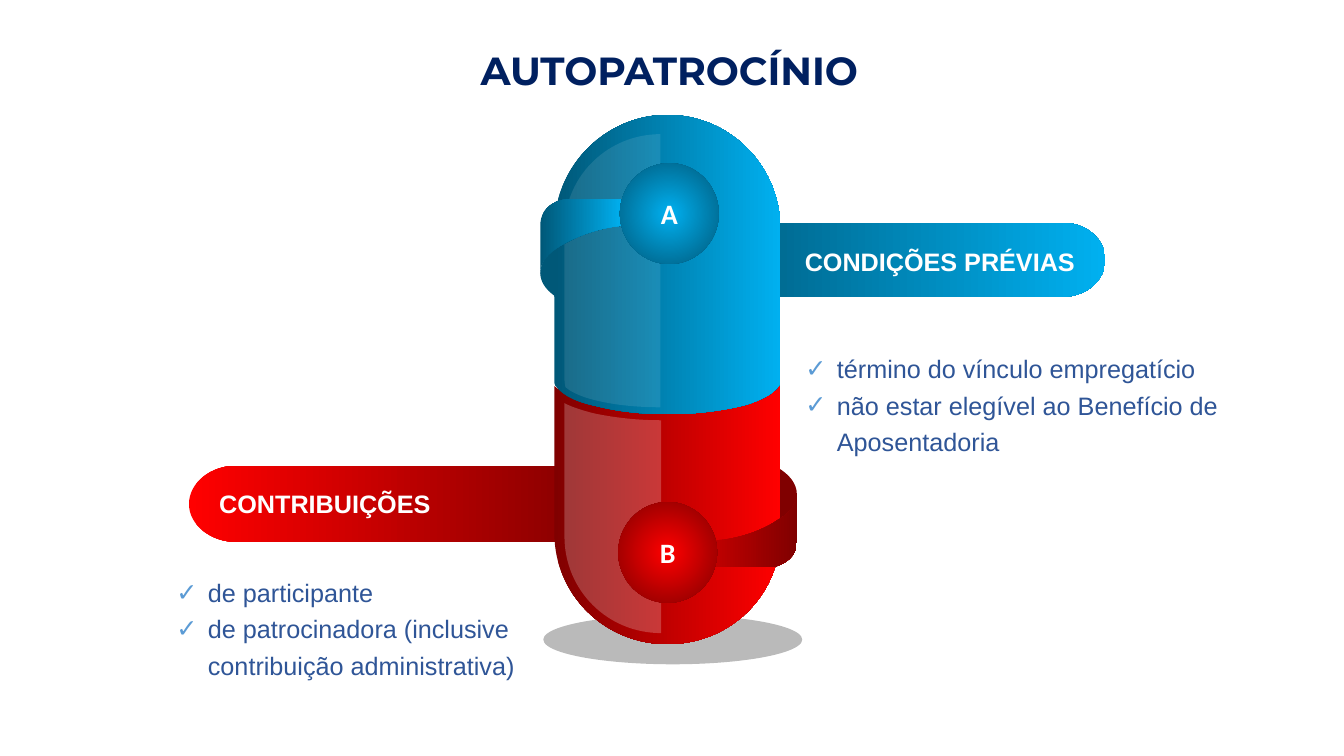
from lxml import etree
from pptx import Presentation
from pptx.dml.color import RGBColor
from pptx.enum import shapes, text
from pptx.oxml import ns
from pptx.util import Pt

COLORS = {
    "white": "FFFFFF", "black": "000000", "navy": "002060", "ink": "2F5597",
    "check": "5B9BD5", "red": "FF0000", "crimson": "BF0000", "maroon": "800000",
    "sky": "00B0F0", "teal": "005878",
}


def write(frame, *lines, size=18, font="Arial", color="white", bold=False,
          align=text.PP_ALIGN.LEFT, anchor=text.MSO_ANCHOR.MIDDLE,
          insets=(7.2, 3.6, 7.2, 3.6), wrap=True, spacing=1.0, bullet=None):
    frame.auto_size = text.MSO_AUTO_SIZE.NONE
    frame.word_wrap = wrap
    frame.vertical_anchor = anchor
    (frame.margin_left, frame.margin_top,
     frame.margin_right, frame.margin_bottom) = map(Pt, insets)
    for number, line in enumerate(lines):
        paragraph = frame.add_paragraph() if number else frame.paragraphs[0]
        if bullet:
            properties = paragraph._p.get_or_add_pPr()
            properties.set("marL", str(Pt(22.5)))
            properties.set("indent", str(-Pt(22.5)))
            tint = etree.SubElement(properties, ns.qn("a:buClr"))
            etree.SubElement(tint, ns.qn("a:srgbClr"), val=COLORS["check"])
            etree.SubElement(properties, ns.qn("a:buChar"), char=bullet)
        paragraph.alignment = align
        paragraph.line_spacing = spacing
        paragraph.space_before = Pt(0)
        run = paragraph.add_run()
        run.text = line
        run.font.size = Pt(size)
        run.font.name = font
        run.font.bold = bold
        run.font.color.rgb = RGBColor.from_string(COLORS[color])


def add_outline(outline):
    """Draw a start point followed by line ends (x, y) and cubic curves (six numbers)."""
    points = [(Pt(segment[i]), Pt(segment[i + 1]))
              for segment in outline for i in range(0, len(segment), 2)]
    builder = slide.shapes.build_freeform(*points[0])
    builder.add_line_segments(points[1:], close=True)
    drawn = builder.convert_to_shape()
    contour = drawn._element.find(".//" + ns.qn("a:path"))
    steps = iter(contour.findall(ns.qn("a:lnTo")))
    for segment in outline[1:]:
        step = next(steps)
        if len(segment) == 6:
            step.tag = ns.qn("a:cubicBezTo")
            for _ in range(2):
                control = next(steps)
                step.append(control[0])
                contour.remove(control)
    return drawn


deck = Presentation()
deck.slide_width, deck.slide_height = Pt(960), Pt(540)
slide = deck.slides.add_slide(deck.slide_layouts[3])

# Title and the two lists
heading, contributions, conditions = slide.placeholders
for holder, box in ((heading, (329.8, 29.5, 296.6, 41)),
                    (contributions, (118.8, 404.6, 289.4, 83.5)),
                    (conditions, (568.1, 244.8, 345.6, 83.5))):
    holder.left, holder.top, holder.width, holder.height = map(Pt, box)

write(heading.text_frame, "AUTOPATROCÍNIO", size=28, font="Montserrat", color="navy",
      bold=True, align=text.PP_ALIGN.CENTER, anchor=text.MSO_ANCHOR.TOP, wrap=False)
checklist = dict(color="ink", anchor=text.MSO_ANCHOR.TOP, spacing=1.2, bullet="✓")
write(contributions.text_frame, "de participante",
      "de patrocinadora (inclusive contribuição administrativa)", **checklist)
write(conditions.text_frame, "término do vínculo empregatício",
      "não estar elegível ao Benefício de Aposentadoria", **checklist)

# Capsule outlines: a tuple is an ellipse box, a list is a path
floor_shadow = (388.1, 439.2, 185, 35.3)
rim_b = (409.7, 298.8, 136.1, 34.6)
badge_b = (441.6, 358.6, 70.6, 72)
badge_a = (442.8, 116.6, 70.6, 72)
banner_b = [(169.2, 332.6), (150.5, 332.6, 135, 344.9, 135, 360),
            (135, 375.1, 150.5, 387.2, 169.2, 387.2), (554.4, 387.2), (554.4, 332.6)]
core_b = [(478.1, 334.1), (440.6, 334.1, 409.7, 325.4, 409.7, 314.6), (409.7, 380.2),
          (409.7, 418.3, 440.6, 449.3, 478.1, 449.3),
          (515.5, 449.3, 545.8, 418.3, 545.8, 380.2), (545.8, 314.6),
          (545.8, 325.4, 515.5, 334.1, 478.1, 334.1)]
fold_b = [(554.4, 333.4), (554.4, 372.2), (563.8, 367.2, 569.2, 360, 569.2, 352.8),
          (569.2, 345.6, 563.8, 338.4, 554.4, 333.4)]
half_b = [(553, 279.4), (548.6, 282.2, 542.2, 284.4, 535, 286.6),
          (519.8, 290.9, 499.7, 293, 476.8, 293), (457.2, 293, 439.2, 290.9, 424.8, 288),
          (411.8, 285.1, 401.8, 280.8, 396, 275.8), (396, 380.9),
          (396, 424.8, 432, 460.1, 476.8, 460.1),
          (522, 460.1, 557.4, 424.8, 557.4, 380.9), (557.4, 275.8),
          (556.6, 277.2, 555.1, 277.9, 553, 279.4)]
gloss_b = [(424.1, 295.2), (415.4, 293, 409, 290.9, 403.2, 288), (403.2, 383),
           (403.2, 421.9, 434.2, 452.2, 472.3, 452.2), (472.3, 300.2),
           (454.3, 300.2, 437.8, 298.1, 424.1, 295.2)]
ribbon_b = [(554.4, 372.2), (543.6, 379.4, 526.3, 385.2, 511.2, 385.9),
            (511.9, 388.8, 511.9, 391, 511.9, 393.1),
            (511.9, 397.4, 511.9, 401.8, 510.5, 405.2), (550.8, 405.2),
            (553, 405.2, 569.2, 401.8, 569.2, 386.6), (569.2, 352.8),
            (569.2, 360, 563.8, 367.2, 554.4, 372.2)]
banner_a = [(758.9, 159.1), (396, 159.1), (396, 212), (758.9, 212),
            (776.2, 212, 789.5, 200.2, 789.5, 185.5),
            (789.5, 171, 776.2, 159.1, 758.9, 159.1)]
fold_a = [(400.3, 213.8), (400.3, 175.7), (391.7, 180.7, 385.9, 187.2, 385.9, 195.1),
          (385.9, 202.3, 391.7, 209.5, 400.3, 213.8)]
half_a = [(557.4, 160.6), (556, 117.4, 520.6, 82.1, 476.8, 82.1),
          (433.4, 82.1, 397.4, 117.4, 396, 160.6), (396, 273.6),
          (396, 275, 397, 276, 398.2, 277.2), (403.2, 283, 412.6, 287.3, 426.2, 290.2),
          (440.6, 293.8, 457.9, 295.9, 476.8, 295.9),
          (498.2, 295.9, 518.4, 293, 532.1, 289.4),
          (539.3, 287.3, 545.8, 284.4, 550.1, 281.5), (553, 279.5, 556, 277, 557.4, 273.6)]
gloss_a = [(403.2, 161.3), (403.2, 270.7), (403.2, 270.7, 403.2, 273.6, 403.9, 276.5),
           (409, 281, 418, 284.4, 428.4, 286.6), (440.6, 289.4, 455.8, 290.9, 471.8, 290.9),
           (471.8, 95.8), (434.9, 95.8, 404.6, 124.6, 403.2, 161.3)]
ribbon_a = [(400.3, 175.7), (411.8, 168.5, 428.4, 162.7, 443.5, 161.3),
            (442.8, 159.1, 442.8, 157, 442.8, 154.1),
            (442.8, 149.8, 443.5, 146.2, 445, 142.3), (404.6, 142.3),
            (401.8, 142.3, 385.9, 145.4, 385.9, 161.3), (385.9, 195.1),
            (385.9, 187.2, 391.7, 180.7, 400.3, 175.7)]

badge_text = dict(size=20, font="Calibri", bold=True, align=text.PP_ALIGN.CENTER,
                  insets=(5.8, 5.8, 5.8, 5.8))
banner_b_text = dict(bold=True, insets=(21.6, 10, 10.8, 10.8))
banner_a_text = dict(bold=True, align=text.PP_ALIGN.RIGHT, insets=(10.8, 12.8, 21.6, 10.8))

# Outline, shading, {position: color} (opacity when flat), label, label format; back to front
parts = [
    (floor_shadow, "flat", {27: "black"}, None, None),
    (banner_b, "across", {0: "red", 71: "maroon"}, "CONTRIBUIÇÕES", banner_b_text),
    (rim_b, "flat", {100: "crimson"}, None, None),
    (core_b, "across", {0: "red", 25: "crimson", 75: "crimson", 96: "red"}, None, None),
    (fold_b, "flat", {100: "maroon"}, None, None),
    (half_b, "across", {0: "maroon", 100: "red"}, None, None),
    (gloss_b, "flat", {22: "white"}, None, None),
    (ribbon_b, "across", {0: "crimson", 100: "maroon"}, None, None),
    (badge_b, "radial", {0: "red", 100: "maroon"}, "B", badge_text),
    (banner_a, "across", {23: "teal", 100: "sky"}, "CONDIÇÕES PRÉVIAS", banner_a_text),
    (fold_a, "flat", {100: "teal"}, None, None),
    (half_a, "across", {0: "teal", 100: "sky"}, None, None),
    (gloss_a, "flat", {10: "white"}, None, None),
    (ribbon_a, "across", {0: "teal", 100: "sky"}, None, None),
    (badge_a, "radial", {0: "sky", 100: "teal"}, "A", badge_text),
]
for outline, shading, stops, label, label_format in parts:
    if isinstance(outline, tuple):
        part = slide.shapes.add_shape(shapes.MSO_SHAPE.OVAL, *map(Pt, outline))
    else:
        part = add_outline(outline)
    part.shadow.inherit = False
    part.line.fill.background()
    part.fill.solid()
    part.fill.fore_color.rgb = RGBColor.from_string(COLORS[next(iter(stops.values()))])
    solid = part._element.spPr.find(ns.qn("a:solidFill"))
    if shading == "flat":
        etree.SubElement(solid[0], ns.qn("a:alpha"), val=str(next(iter(stops)) * 1000))
    else:
        gradient = etree.Element(ns.qn("a:gradFill"), rotWithShape="1")
        stop_list = etree.SubElement(gradient, ns.qn("a:gsLst"))
        for position, color in stops.items():
            stop = etree.SubElement(stop_list, ns.qn("a:gs"), pos=str(position * 1000))
            etree.SubElement(stop, ns.qn("a:srgbClr"), val=COLORS[color])
        if shading == "across":
            etree.SubElement(gradient, ns.qn("a:lin"), ang="0", scaled="0")
        else:
            radial = etree.SubElement(gradient, ns.qn("a:path"), path="circle")
            etree.SubElement(radial, ns.qn("a:fillToRect"), dict.fromkeys("ltrb", "50000"))
        part._element.spPr.replace(solid, gradient)
    if label:
        write(part.text_frame, label, **label_format)

deck.save("out.pptx")
